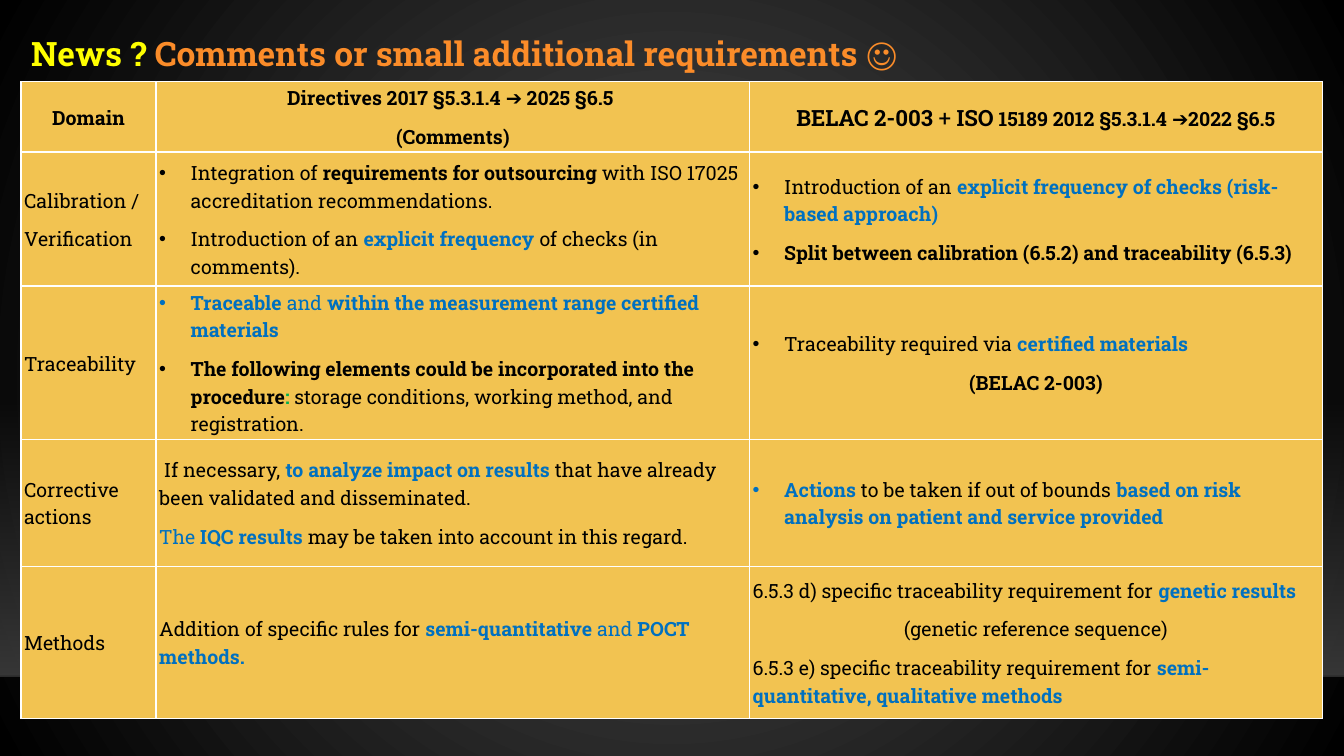
import pptx
import pptx.util
import pptx.oxml
import pptx.dml.color
import pptx.enum.text
import pptx.enum.shapes
from lxml import etree

Pt = pptx.util.Pt
RGB = pptx.dml.color.RGBColor
ALIGN = pptx.enum.text.PP_ALIGN
ANCHOR = pptx.enum.text.MSO_ANCHOR
FONT = "Roboto Slab"
BLACK = RGB(0x00, 0x00, 0x00)
BLUE = RGB(0x00, 0x70, 0xC0)
GREEN = RGB(0x00, 0xB0, 0x50)
YELLOW = RGB(0xFF, 0xFF, 0x00)
ORANGE = RGB(0xFB, 0x8C, 0x29)
GOLD = RGB(0xF2, 0xC3, 0x51)
WHITE = RGB(0xFF, 0xFF, 0xFF)
GREY = RGB(0x50, 0x50, 0x50)
DARK = RGB(0x45, 0x45, 0x45)
EDGE = RGB(0x00, 0x00, 0x01)

LOOKS = {
    "plain": (BLACK, False, 14),
    "bold": (BLACK, True, 14),
    "blue": (BLUE, False, 14),
    "key": (BLUE, True, 14),
    "green": (GREEN, True, 14),
    "big": (BLACK, True, 16),
    "thin": (BLACK, False, 16),
    "news": (YELLOW, True, 24),
    "head": (ORANGE, True, 24),
}

TITLE = [("News ?", "news"), (" Comments or small additional requirements ☺", "head")]
ROWS = [
    [
        [("mid", [("Domain", "bold")])],
        [("mid", [("Directives 2017 §5.3.1.4 ➔ 2025 §6.5 ", "bold")]),
         ("mid", [("(Comments)", "bold")])],
        [("mid", [("BELAC 2-003 ", "big"), ("+ ", "thin"), ("ISO", "big"),
                  (" 15189 2012 §5.3.1.4 ➔2022 §6.5", "bold")])],
    ],
    [
        [("left", [("Calibration /", "plain")]),
         ("left", [("Verification", "plain")])],
        [("dot", [("Integration of ", "plain"), ("requirements for outsourcing ", "bold"),
                  ("with ISO 17025 accreditation recommendations.", "plain")]),
         ("dot", [("Introduction of an ", "plain"), ("explicit frequency ", "key"),
                  ("of checks (in comments).", "plain")])],
        [("dot", [("Introduction of an ", "plain"),
                  ("explicit frequency of checks (risk-based approach)", "key")]),
         ("dot", [("Split between calibration (6.5.2) and traceability (6.5.3)", "bold")])],
    ],
    [
        [("left", [("Traceability", "plain")])],
        [("dot", [("Traceable", "key"), (" and ", "blue"),
                  ("within the measurement range certified materials", "key")]),
         ("dot", [("The following elements could be incorporated into the procedure", "bold"),
                  (": ", "green"),
                  ("storage conditions, working method, and registration.", "plain")])],
        [("dot", [("Traceability required via ", "plain"), ("certified materials", "key")]),
         ("mid", [("(BELAC 2-003)", "bold")])],
    ],
    [
        [("left", [("Corrective actions", "plain")])],
        [("left", [(" If necessary, ", "plain"), ("to analyze impact on results ", "key"),
                   ("that have already been validated and disseminated.", "plain")]),
         ("left", [("The ", "blue"), ("IQC results ", "key"),
                   ("may be taken into account in this regard.", "plain")])],
        [("dot", [("Actions ", "key"), ("to be taken if out of bounds ", "plain"),
                  ("based on risk analysis on patient and service provided", "key")])],
    ],
    [
        [("left", [("Methods", "plain")])],
        [("left", [("Addition of specific rules for ", "plain"), ("semi-quantitative ", "key"),
                   ("and ", "blue"), ("POCT methods.", "key")])],
        [("left", [("6.5.3 d) specific traceability requirement for ", "plain"),
                   ("genetic results", "key")]),
         ("mid", [("(genetic reference sequence)", "plain")]),
         ("left", [("6.5.3 e) specific traceability requirement for ", "plain"),
                   ("semi-quantitative, qualitative methods", "key")])],
    ],
]
COLS = [96.5, 424, 409]
HIGHS = [49.7, 95.8, 109.4, 90.7, 108.7]
WIDE, TALL = 960, 540
LEFT, TOP = 15, 58.3
FLOOR = 483

CELL = dict(vertical_anchor=ANCHOR.MIDDLE, margin_left=Pt(2.2), margin_right=Pt(2.2),
            margin_top=Pt(1.4), margin_bottom=Pt(1.4))
PARA = dict(line_spacing=1.06, space_after=Pt(8), space_before=Pt(0))
BOX = dict(left=Pt(LEFT), top=Pt(14.4), width=Pt(sum(COLS)), height=Pt(44))
FRAME = dict(word_wrap=True, auto_size=pptx.enum.text.MSO_AUTO_SIZE.NONE,
             vertical_anchor=ANCHOR.TOP, margin_left=Pt(7.2), margin_right=Pt(7.2),
             margin_top=Pt(3.6), margin_bottom=Pt(3.6))
HEAD = dict(alignment=ALIGN.LEFT, line_spacing=1.2, space_before=Pt(0))
NS = 'xmlns:a="http://schemas.openxmlformats.org/drawingml/2006/main"'


def put(item, vals):
    for name, val in vals.items():
        setattr(item, name, val)


def node(xml):
    return pptx.oxml.parse_xml(xml.replace(" ", f" {NS} ", 1))


def write(para, runs):
    for text, look in runs:
        run = para.add_run()
        run.text = text
        color, bold, size = LOOKS[look]
        put(run.font, dict(name=FONT, bold=bold, size=Pt(size)))
        run.font.color.rgb = color


def fade(fill, stops, tail):
    fill.gradient()
    for stop, (color, place) in zip(fill.gradient_stops, stops):
        stop.color.rgb = color
        stop.position = place
    grad = fill._fill._gradFill
    for old in grad.xpath("a:lin | a:path"):
        grad.remove(old)
    grad.find(pptx.oxml.ns.qn("a:gsLst")).addnext(node(tail))
    return grad


def clear(parent, shares):
    for color, share in zip(parent.xpath(".//a:srgbClr"), shares):
        color.append(node(f'<a:alpha val="{share * 1000}"/>'))


def fill_cell(cell, paras):
    put(cell, CELL)
    edge = cell._tc.get_or_add_tcPr()
    for side in "LRTB":
        edge.append(node(f'<a:ln{side} w="12700"><a:solidFill><a:srgbClr val="{WHITE}"/>'
                         f'</a:solidFill></a:ln{side}>'))
    cell.fill.solid()
    cell.fill.fore_color.rgb = GOLD
    frame = cell.text_frame
    for num, (kind, runs) in enumerate(paras):
        para = frame.add_paragraph() if num else frame.paragraphs[0]
        if kind == "dot":
            props = para._p.get_or_add_pPr()
            props.set("marL", str(Pt(22.5)))
            props.set("indent", str(-Pt(22.5)))
            props.append(node('<a:buFont typeface="Arial"/>'))
            props.append(node('<a:buChar char="•"/>'))
        put(para, PARA)
        para.alignment = ALIGN.CENTER if kind == "mid" else ALIGN.LEFT
        write(para, runs)


def main():
    deck = pptx.Presentation()
    put(deck, dict(slide_width=Pt(WIDE), slide_height=Pt(TALL)))
    slide = deck.slides.add_slide(deck.slide_layouts[5])
    fade(slide.background.fill, [(GREY, 0), (BLACK, 1)],
         '<a:path path="circle"><a:fillToRect l="50000" t="50000" r="50000" b="50000"/></a:path>')
    shapes = slide.shapes

    glow = shapes.add_shape(pptx.enum.shapes.MSO_SHAPE.RECTANGLE,
                            Pt(0), Pt(285), Pt(WIDE), Pt(FLOOR - 285))
    glow.shadow.inherit = False
    glow.line.fill.background()
    clear(fade(glow.fill, [(DARK, 0), (DARK, 1)], '<a:lin ang="5400000" scaled="0"/>'), [0, 80])

    floor = shapes.add_connector(pptx.enum.shapes.MSO_CONNECTOR.STRAIGHT,
                                 Pt(0), Pt(FLOOR), Pt(WIDE), Pt(FLOOR))
    floor.line.width = Pt(1)
    floor.line.color.rgb = EDGE
    props = floor._element.spPr
    clear(props, [20])
    etree.SubElement(props, pptx.oxml.ns.qn("a:effectLst"))

    table = shapes.add_table(len(ROWS), len(COLS), Pt(LEFT), Pt(TOP),
                             Pt(sum(COLS)), Pt(sum(HIGHS))).table
    put(table, dict(first_row=False, horz_banding=False))
    for col, wide in zip(table.columns, COLS):
        col.width = Pt(wide)
    for row, high, cells in zip(table.rows, HIGHS, ROWS):
        row.height = Pt(high)
        for cell, paras in zip(row.cells, cells):
            fill_cell(cell, paras)

    title = shapes.title
    put(title, BOX)
    put(title.text_frame, FRAME)
    para = title.text_frame.paragraphs[0]
    put(para, HEAD)
    write(para, TITLE)
    shapes._spTree.append(title._element)
    deck.save("out.pptx")


if __name__ == "__main__":
    main()
